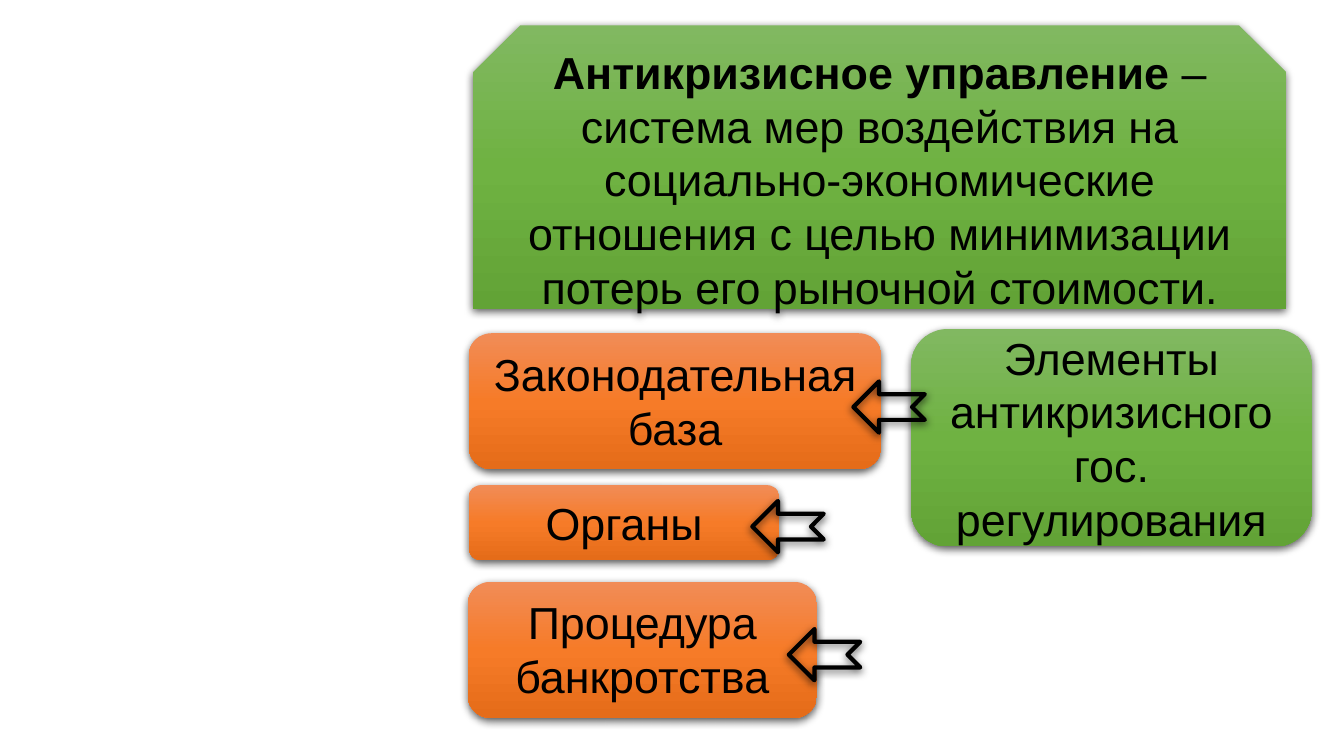
from lxml.etree import SubElement
from copy import deepcopy
from pptx import Presentation
from pptx.dml.color import RGBColor
from pptx.enum.shapes import MSO_SHAPE
from pptx.enum.text import MSO_ANCHOR, MSO_AUTO_SIZE, PP_ALIGN
from pptx.oxml.ns import qn
from pptx.util import Cm, Pt

COLORS = {
    "text": "000000",
    "shadow": "000000",
    "outline": "000000",
    "green": ["81B861", "6FB242", "62A336"],
    "orange": ["F18C57", "F67B28", "E56C19"],
}
TEXT_FORMAT = {"name": "Arial", "size": Pt(24)}
FIXED_FRAME = {"word_wrap": True, "vertical_anchor": MSO_ANCHOR.MIDDLE}
GROWING_FRAME = {
    "word_wrap": True,
    "vertical_anchor": MSO_ANCHOR.TOP,
    "auto_size": MSO_AUTO_SIZE.SHAPE_TO_FIT_TEXT,
}

DEFINITION = [
    ("Антикризисное управление ", True),
    ("– система мер воздействия на социально-экономические отношения "
     "с целью минимизации потерь его рыночной стоимости.", False),
]
# Text, box (left, top, width, height) and arrow (left, top), in centimetres
ELEMENTS = [
    ("Органы", (8.86, 9.17, 5.87, 1.42), (14.22, 9.47)),
    ("Процедура банкротства", (8.84, 11, 6.6, 2.57), (14.91, 11.89)),
    ("Законодательная база", (8.86, 6.3, 7.8, 2.57), (16.13, 7.21)),
]
ARROW_SIZE = (1.35, 0.97)


def add_shadow(shape):
    shape.shadow.inherit = False
    effects = shape.element.spPr.find(qn("a:effectLst"))
    shadow = SubElement(effects, qn("a:outerShdw"), blurRad=str(Pt(4.5)),
                        dist=str(Pt(1.5)), dir="5400000", algn="ctr", rotWithShape="0")
    color = SubElement(shadow, qn("a:srgbClr"), val=COLORS["shadow"])
    SubElement(color, qn("a:alpha"), val="63000")


def fill_gradient(shape, colors):
    """Fill from top to bottom with three evenly spaced colours."""
    shape.fill.gradient()
    shape.fill.gradient_angle = 270
    stop_list = shape.element.spPr.find(qn("a:gradFill")).find(qn("a:gsLst"))
    stop_list.insert(1, deepcopy(stop_list[0]))
    for stop, position, color in zip(shape.fill.gradient_stops, (0, 0.5, 1), colors):
        stop.position = position
        stop.color.rgb = RGBColor.from_string(color)


def add_box(slide, kind, place, color, spans, frame_format):
    box = slide.shapes.add_shape(kind, *map(Cm, place))
    fill_gradient(box, COLORS[color])
    box.line.fill.background()
    add_shadow(box)
    frame = box.text_frame
    for name, value in frame_format.items():
        setattr(frame, name, value)
    para = frame.paragraphs[0]
    para.alignment = PP_ALIGN.CENTER
    for text, bold in spans:
        span = para.add_run()
        span.text = text
        for name, value in {**TEXT_FORMAT, "bold": bold}.items():
            setattr(span.font, name, value)
        span.font.color.rgb = RGBColor.from_string(COLORS["text"])


def add_left_arrow(slide, position):
    arrow = slide.shapes.add_shape(MSO_SHAPE.NOTCHED_RIGHT_ARROW,
                                   *map(Cm, position + ARROW_SIZE))
    arrow.element.spPr.find(qn("a:xfrm")).set("flipH", "1")
    arrow.fill.background()
    arrow.line.color.rgb = RGBColor.from_string(COLORS["outline"])
    arrow.line.width = Pt(2.25)
    add_shadow(arrow)


def main():
    deck = Presentation()
    deck.slide_width, deck.slide_height = Cm(25.4), Cm(14.29)
    slide = deck.slides.add_slide(deck.slide_layouts[6])

    add_box(slide, MSO_SHAPE.SNIP_2_SAME_RECTANGLE, (8.94, 0.48, 15.37, 5.36),
            "green", DEFINITION, FIXED_FRAME)
    add_box(slide, MSO_SHAPE.ROUNDED_RECTANGLE, (17.22, 6.22, 7.57, 4.11), "green",
            [("Элементы антикризисного гос. регулирования", False)], FIXED_FRAME)
    for text, place, _ in ELEMENTS:
        add_box(slide, MSO_SHAPE.ROUNDED_RECTANGLE, place, "orange",
                [(text, False)], GROWING_FRAME)
    for _, _, arrow_position in ELEMENTS:
        add_left_arrow(slide, arrow_position)

    deck.save("out.pptx")


if __name__ == "__main__":
    main()
